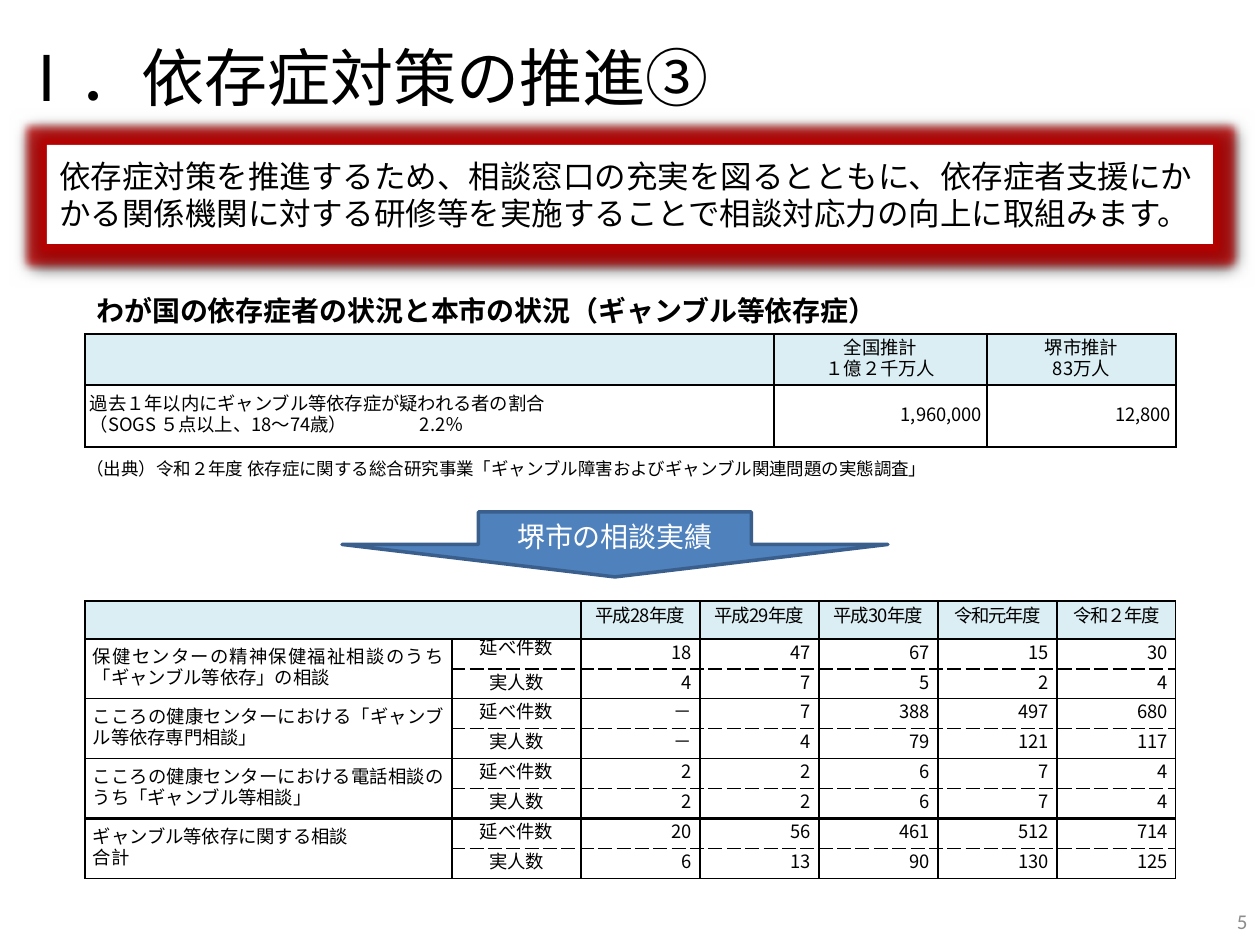
"""Build the slide on gambling addiction measures and consultation results."""
from lxml import etree
from pptx import Presentation
from pptx.dml.color import RGBColor
from pptx.enum.shapes import MSO_SHAPE
from pptx.enum.text import MSO_ANCHOR, PP_ALIGN
from pptx.oxml.ns import qn
from pptx.util import Pt

PX = 914400 // 126
LEFT, CENTER, RIGHT, JUSTIFY = PP_ALIGN.LEFT, PP_ALIGN.CENTER, PP_ALIGN.RIGHT, PP_ALIGN.JUSTIFY
TOP, MIDDLE = MSO_ANCHOR.TOP, MSO_ANCHOR.MIDDLE
RECTANGLE, DOWN_ARROW = MSO_SHAPE.RECTANGLE, MSO_SHAPE.DOWN_ARROW
HEADING_FONT, BODY_FONT = "Calibri", "Noto Sans CJK JP"
COLORS = {
    "black": "000000", "white": "FFFFFF", "gray": "8C8C8C", "header": "DBEEF4",
    "arrow": "4F81BD", "arrow_line": "3A5F8C", "glow": "C00000",
}

TITLE = "Ⅰ．依存症対策の推進③"
BANNER = ("依存症対策を推進するため、相談窓口の充実を図るとともに、依存症者支援にかかる"
          "関係機関に対する研修等を実施することで相談対応力の向上に取組みます。")
SUBTITLE = "わが国の依存症者の状況と本市の状況（ギャンブル等依存症）"
SOURCE = "（出典）令和２年度 依存症に関する総合研究事業「ギャンブル障害およびギャンブル関連問題の実態調査」"
ARROW = "堺市の相談実績"
PAGE = "5"

ESTIMATES = [
    ["", "全国推計\v１億２千万人", "堺市推計\v83万人"],
    ["過去１年以内にギャンブル等依存症が疑われる者の割合\v（SOGS ５点以上、18～74歳）\t2.2％",
     "1,960,000", "12,800"],
]
YEARS = ["平成28年度", "平成29年度", "平成30年度", "令和元年度", "令和２年度"]
MEASURES = ["延べ件数", "実人数"]
CONSULTATIONS = [
    ("保健センターの精神保健福祉相談のうち「ギャンブル等依存」の相談",
     [["18", "47", "67", "15", "30"], ["4", "7", "5", "2", "4"]]),
    ("こころの健康センターにおける「ギャンブル等依存専門相談」",
     [["－", "7", "388", "497", "680"], ["－", "4", "79", "121", "117"]]),
    ("こころの健康センターにおける電話相談のうち「ギャンブル等相談」",
     [["2", "2", "6", "7", "4"], ["2", "2", "6", "7", "4"]]),
    ("ギャンブル等依存に関する相談\n合計",
     [["20", "56", "461", "512", "714"], ["6", "13", "90", "130", "125"]]),
]
TOTAL_ROW = 2 * len(CONSULTATIONS) - 1


def px(*lengths):
    return [length * PX for length in lengths]


def rgb(name):
    return RGBColor.from_string(COLORS[name])


def write(frame, text, size, color="black", font=BODY_FONT, bold=False,
          align=LEFT, anchor=TOP, leading=None, spacing=None):
    frame.text = text
    frame.word_wrap = True
    frame.vertical_anchor = anchor
    for paragraph in frame.paragraphs:
        paragraph.alignment = align
        if leading:
            paragraph.line_spacing = Pt(leading)
        for run in paragraph.runs:
            run.font.size = Pt(size)
            run.font.name = font
            run.font.bold = bold
            run.font.color.rgb = rgb(color)
            properties = run.font._element
            etree.SubElement(properties, qn("a:ea"), typeface=BODY_FONT)
            if spacing:
                properties.set("spc", str(spacing))


def add_text(slide, box, text, size, **style):
    shape = slide.shapes.add_textbox(*px(*box))
    write(shape.text_frame, text, size, **style)


def add_block(slide, preset, box, fill):
    shape = slide.shapes.add_shape(preset, *px(*box))
    shape.shadow.inherit = False
    shape.fill.solid()
    shape.fill.fore_color.rgb = rgb(fill)
    return shape


def add_color(parent, name, alpha=100):
    color = etree.SubElement(parent, qn("a:srgbClr"), val=COLORS[name])
    etree.SubElement(color, qn("a:alpha"), val=str(alpha * 1000))


def add_glow_and_shadow(shape):
    effects = shape._element.spPr.find(qn("a:effectLst"))
    glow = etree.SubElement(effects, qn("a:glow"), rad=str(Pt(8)))
    add_color(glow, "glow", 75)
    shadow = etree.SubElement(effects, qn("a:outerShdw"), blurRad=str(Pt(8.5)),
                              dist=str(Pt(1)), dir="5400000", rotWithShape="0")
    add_color(shadow, "black")


def set_borders(cell, top=(1, "solid"), bottom=(1, "solid")):
    properties = cell._tc.get_or_add_tcPr()
    sides = {"L": (1, "solid"), "R": (1, "solid"), "T": top, "B": bottom}
    for side, (width, dash) in sides.items():
        line = etree.SubElement(properties, qn("a:ln" + side), w=str(Pt(width)))
        add_color(etree.SubElement(line, qn("a:solidFill")), "black")
        etree.SubElement(line, qn("a:prstDash"), val=dash)


def set_cell(cell, text, header, inset, **style):
    cell.margin_left = cell.margin_right = inset * PX
    cell.margin_top = cell.margin_bottom = 0
    if text:
        write(cell.text_frame, text, 10.5, **style)
    cell.vertical_anchor = style["anchor"]
    if header:
        cell.fill.solid()
        cell.fill.fore_color.rgb = rgb("header")
    else:
        cell.fill.background()


def add_grid(slide, left, top, widths, heights):
    frame = slide.shapes.add_table(len(heights), len(widths),
                                   *px(left, top, sum(widths), sum(heights)))
    table = frame.table
    table.first_row = table.horz_banding = False
    for column, width in zip(table.columns, widths):
        column.width = width * PX
    for row, height in zip(table.rows, heights):
        row.height = height * PX
    return table


def add_estimates(slide):
    table = add_grid(slide, 85, 334, [689, 213, 189], [51, 62])
    for row, texts in enumerate(ESTIMATES):
        for column, text in enumerate(texts):
            cell = table.cell(row, column)
            align = CENTER if row == 0 else RIGHT if column else LEFT
            set_borders(cell)
            set_cell(cell, text, row == 0, 5, align=align, anchor=MIDDLE, leading=12)
    properties = table.cell(1, 0).text_frame.paragraphs[0]._p.get_or_add_pPr()
    tabs = etree.SubElement(properties, qn("a:tabLst"))
    etree.SubElement(tabs, qn("a:tab"), pos=str(330 * PX), algn="l")


def consultation_rows():
    rows = [["", ""] + YEARS]
    for label, results in CONSULTATIONS:
        for index, (measure, values) in enumerate(zip(MEASURES, results)):
            rows.append(["" if index else label, measure] + values)
    return rows


def add_consultations(slide):
    rows = consultation_rows()
    table = add_grid(slide, 85, 601, [367, 129] + [119] * len(YEARS), [27] + [30] * (len(rows) - 1))
    for row, texts in enumerate(rows):
        top = (1.5 if row == TOTAL_ROW else 1, "solid")
        bottom = (1.5 if row == TOTAL_ROW - 1 else 1, "solid")
        for column, text in enumerate(texts):
            cell = table.cell(row, column)
            inner = row > 0 and column > 0
            set_borders(cell, (1, "dash") if inner and row % 2 == 0 else top,
                        (1, "dash") if inner and row % 2 else bottom)
            if row == 0:
                style = {"align": CENTER, "anchor": TOP, "spacing": -70}
            else:
                align = (JUSTIFY, CENTER)[column] if column < 2 else RIGHT
                anchor = TOP if (row, column) == (1, 1) else MIDDLE
                style = {"align": align, "anchor": anchor, "leading": 12}
            set_cell(cell, text, row == 0, 8, **style)
    table.cell(0, 0).merge(table.cell(0, 1))
    for row in range(1, len(rows), 2):
        table.cell(row, 0).merge(table.cell(row + 1, 0))


def main():
    presentation = Presentation()
    presentation.slide_width, presentation.slide_height = px(1260, 945)
    slide = presentation.slides.add_slide(presentation.slide_layouts[6])
    add_text(slide, (3, -3, 1260, 158), TITLE, 36, font=HEADING_FONT, anchor=MIDDLE)
    banner = add_block(slide, RECTANGLE, (47, 145, 1166, 99), "white")
    banner.line.fill.background()
    add_glow_and_shadow(banner)
    write(banner.text_frame, BANNER, 18, anchor=MIDDLE)
    add_text(slide, (966, 896, 294, 50), PAGE, 12, color="gray", font=HEADING_FONT,
             align=RIGHT, anchor=MIDDLE)
    add_text(slide, (84, 287, 863, 47), SUBTITLE, 16, bold=True)
    arrow = add_block(slide, DOWN_ARROW, (342, 512, 546, 65), "arrow")
    arrow.line.color.rgb = rgb("arrow_line")
    arrow.line.width = Pt(2)
    write(arrow.text_frame, ARROW, 16, color="white", align=CENTER, anchor=MIDDLE)
    add_estimates(slide)
    add_text(slide, (74, 452, 1111, 34), SOURCE, 10)
    add_consultations(slide)
    presentation.save("out.pptx")


if __name__ == "__main__":
    main()
